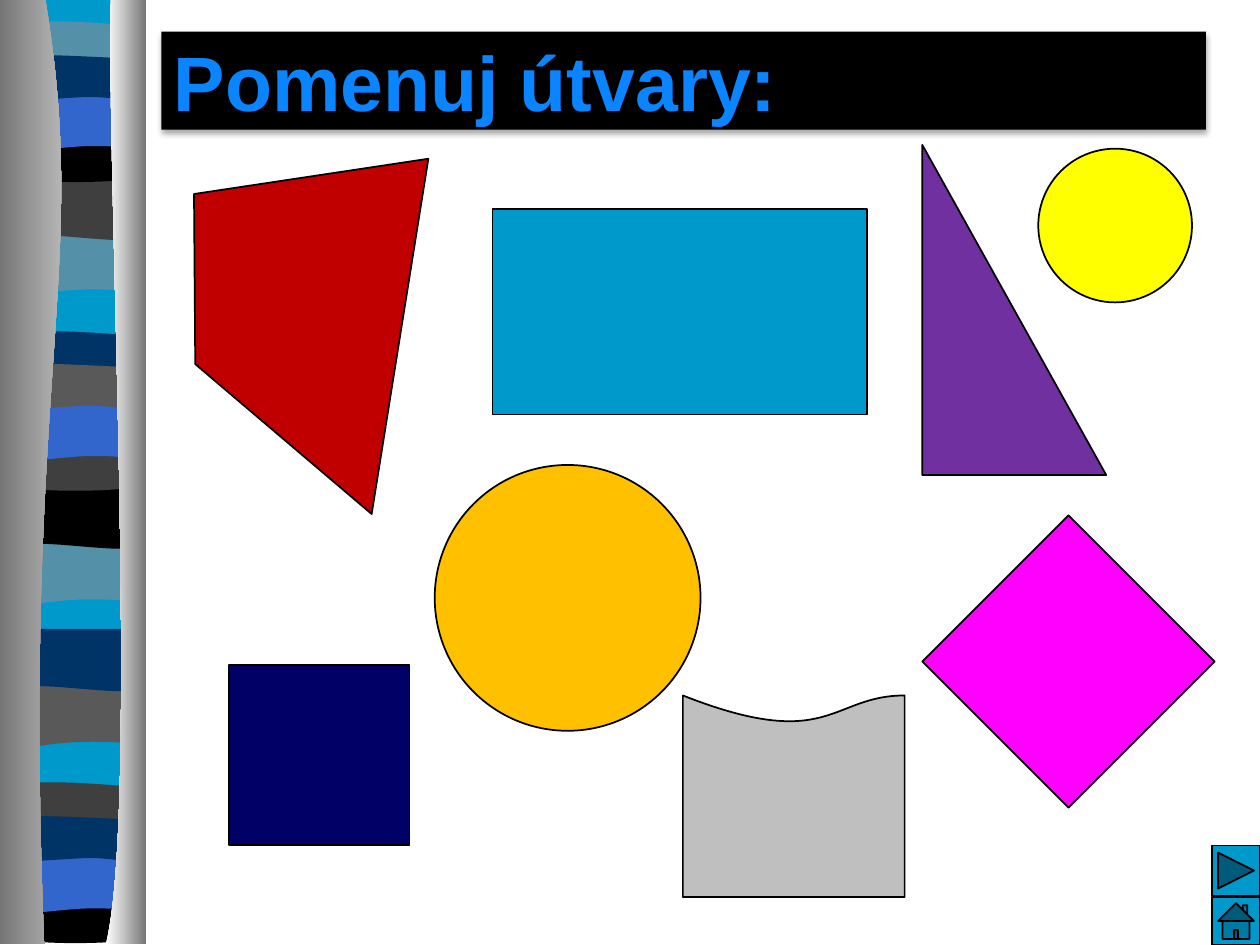
from lxml import etree
from pptx import Presentation
from pptx import util as u
from pptx.dml.color import RGBColor
from pptx.enum import shapes, text
from pptx.oxml import parse_xml
from pptx.oxml.ns import qn

SKY, TEAL, NAVY, BLUE = "0099CC", "5490A8", "003366", "3366CC"
CHARCOAL, GREY, BLACK = "3F3F3F", "595959", "000000"
LEFT, MIDDLE, RIGHT = 0.05, 0.72, 1.14

# Outlines of the ribbon's bands, with y counted from the band's top.
# A pair is a corner; six numbers are a Bezier curve (two controls, then the end).
BANDS = {
    "dip": [(RIGHT, 0), (RIGHT, 0.47), (0.39, 0.39, 0.24, 0.55, LEFT, 0.47), (LEFT, 0)],
    "swell": [(RIGHT, 0), (RIGHT, 0.47), (0.96, 0.55, 0.39, 0.41, LEFT, 0.47), (LEFT, 0)],
    "thin": [(RIGHT, 0), (RIGHT, 0.24), (0.96, 0.29, 0.24, 0.29, LEFT, 0.24), (LEFT, 0),
             (0.12, -0.05, 0.29, -0.04, 0.47, -0.04), (0.65, -0.04, 1, -0.01, RIGHT, 0)],
    "bowl": [(RIGHT, 0), (RIGHT, 0.32), (0.96, 0.38, 0.24, 0.38, LEFT, 0.32), (LEFT, 0),
             (0.72, 0.05, 0.91, 0, RIGHT, 0)],
    "arch": [(RIGHT, 0), (RIGHT, 0.47), (0.97, 0.42, 0.9, 0.42, MIDDLE, 0.42),
             (0.54, 0.42, 0.22, 0.47, LEFT, 0.47), (LEFT, 0)],
    "wave": [(RIGHT, 0), (RIGHT, 0.31), (1.07, 0.36, 0.9, 0.31, MIDDLE, 0.31),
             (0.54, 0.31, 0.17, 0.36, LEFT, 0.31), (LEFT, 0),
             (0.21, -0.05, 0.79, 0, 0.97, 0)],
}
RIBBON = [
    ("dip", 1.85, TEAL), ("swell", 1.41, CHARCOAL), ("thin", 0.21, TEAL),
    ("bowl", 1.08, BLACK), ("arch", 0.74, BLUE), ("wave", 0.46, NAVY),
    ("dip", 4.31, TEAL), ("swell", 3.86, BLACK), ("thin", 2.67, NAVY),
    ("bowl", 3.53, CHARCOAL), ("arch", 3.2, BLUE), ("wave", 2.91, GREY),
    ("dip", 5.44, GREY), ("swell", 4.99, NAVY), ("thin", 6.25, CHARCOAL),
    ("bowl", 7.12, BLACK), ("arch", 6.79, BLUE), ("wave", 6.5, NAVY),
]


def rgb(value):
    return RGBColor.from_string(value)


def bend(figure, steps):
    """Merge each curve's three line segments into one Bezier segment."""
    lines = iter(list(figure.element.iter(qn("a:lnTo"))))
    for step in steps:
        segment = next(lines)
        if len(step) == 6:
            segment.tag = qn("a:cubicBezTo")
            for _ in range(2):
                extra = next(lines)
                segment.append(extra[0])
                extra.getparent().remove(extra)


class ShapesSlide:
    font = "Arial"
    edge = BLACK

    def __init__(self, presentation):
        self.master = presentation.slide_master
        self.slide = presentation.slides.add_slide(presentation.slide_layouts[5])

    def paint(self, figure, fill, edged):
        figure.shadow.inherit = False
        if isinstance(fill, tuple):
            figure.fill.gradient()
            figure.fill.gradient_angle = 0
            for stop, colour in zip(figure.fill.gradient_stops, fill):
                stop.color.rgb = rgb(colour)
        else:
            figure.fill.solid()
            figure.fill.fore_color.rgb = rgb(fill)
        if edged:
            figure.line.color.rgb = rgb(self.edge)
            figure.line.width = u.Pt(1)
        else:
            figure.line.fill.background()

    def preset(self, kind, left, top, width, height, fill):
        box = [u.Inches(n) for n in (left, top, width, height)]
        self.paint(self.slide.shapes.add_shape(kind, *box), fill, edged=True)

    def outline(self, steps, fill, edged=True):
        start, *rest = steps
        points = [(u.Inches(step[i]), u.Inches(step[i + 1]))
                  for step in rest for i in range(0, len(step), 2)]
        builder = self.slide.shapes.build_freeform(*[u.Inches(n) for n in start])
        builder.add_line_segments(points, close=False)
        figure = builder.convert_to_shape()
        bend(figure, rest)
        etree.SubElement(next(figure.element.iter(qn("a:path"))), qn("a:close"))
        self.paint(figure, fill, edged)
        return figure

    def band(self, kind, top, fill):
        """Draw one ribbon band, moved down to its top."""
        moved = [tuple(n + top if i % 2 else n for i, n in enumerate(step))
                 for step in BANDS[kind]]
        return self.outline(moved, fill, edged=False)

    def move_to_master(self, figures):
        """Group the figures and place them behind everything on the master."""
        group = self.slide.shapes.add_group_shape(figures)
        self.master.shapes.element.insert(2, group.element)

    def title(self, wording):
        heading = self.slide.shapes.title
        heading.left, heading.top = u.Inches(1.28), u.Inches(0.25)
        heading.width, heading.height = u.Inches(8.29), u.Inches(0.78)
        self.paint(heading, BLACK, edged=False)
        effects = next(heading.element.iter(qn("a:effectLst")))
        effects.append(parse_xml(
            '<a:outerShdw xmlns:a="http://schemas.openxmlformats.org/drawingml/2006/main" '
            'blurRad="40000" dist="23000" dir="5400000" rotWithShape="0">'
            '<a:srgbClr val="000000"><a:alpha val="35000"/></a:srgbClr></a:outerShdw>'))
        frame = heading.text_frame
        frame.text = wording
        frame.word_wrap = True
        frame.auto_size = text.MSO_AUTO_SIZE.NONE
        frame.vertical_anchor = text.MSO_ANCHOR.MIDDLE
        frame.paragraphs[0].alignment = text.PP_ALIGN.LEFT
        font = frame.paragraphs[0].runs[0].font
        font.name, font.size, font.bold = self.font, u.Pt(44), True
        font.color.rgb = rgb("0A85FF")


def main():
    presentation = Presentation()
    presentation.slide_width, presentation.slide_height = u.Inches(10), u.Inches(7.5)
    page = ShapesSlide(presentation)
    kinds = shapes.MSO_SHAPE

    backing = page.outline([(RIGHT, 0), (RIGHT, 7.47), (LEFT, 7.47), (LEFT, 0)],
                           SKY, edged=False)
    bands = [page.band(*band) for band in RIBBON]
    left_curtain = page.outline(
        [(0.36, 0), (0.72, 2.16, 0.17, 2.96, 0.35, 7.49), (0, 7.49), (0, 0)],
        ("767676", "D4D4D4"), edged=False)
    right_curtain = page.outline(
        [(0.88, 0), (0.84, 1.25, 1.11, 6.46, 0.84, 7.49), (1.16, 7.49), (1.16, 0)],
        ("FFFFFF", "767676"), edged=False)
    page.move_to_master([backing, *bands, left_curtain, right_curtain])

    page.title("Pomenuj útvary:")

    page.preset(kinds.ACTION_BUTTON_HOME, 9.62, 7.12, 0.38, 0.38, SKY)
    page.preset(kinds.RECTANGLE, 3.91, 1.66, 2.97, 1.63, SKY)
    page.preset(kinds.RIGHT_TRIANGLE, 7.32, 1.15, 1.46, 2.62, "7030A0")
    page.preset(kinds.OVAL, 3.45, 3.69, 2.11, 2.11, "FFC000")
    page.preset(kinds.DIAMOND, 7.32, 4.09, 2.32, 2.32, "FF00FF")
    page.preset(kinds.RECTANGLE, 1.82, 5.28, 1.43, 1.43, "000066")
    page.outline([(1.54, 1.54), (3.4, 1.26), (2.95, 4.08), (1.55, 2.89)], "C00000")
    page.preset(kinds.OVAL, 8.24, 1.18, 1.22, 1.22, "FFFF00")
    page.outline([(5.42, 5.52), (6.59, 5.98, 6.59, 5.52, 7.18, 5.52), (7.18, 7.12),
                  (5.42, 7.12)], "BFBFBF")
    page.preset(kinds.ACTION_BUTTON_FORWARD_OR_NEXT, 9.62, 6.71, 0.38, 0.4, SKY)

    presentation.save("out.pptx")


if __name__ == "__main__":
    main()
